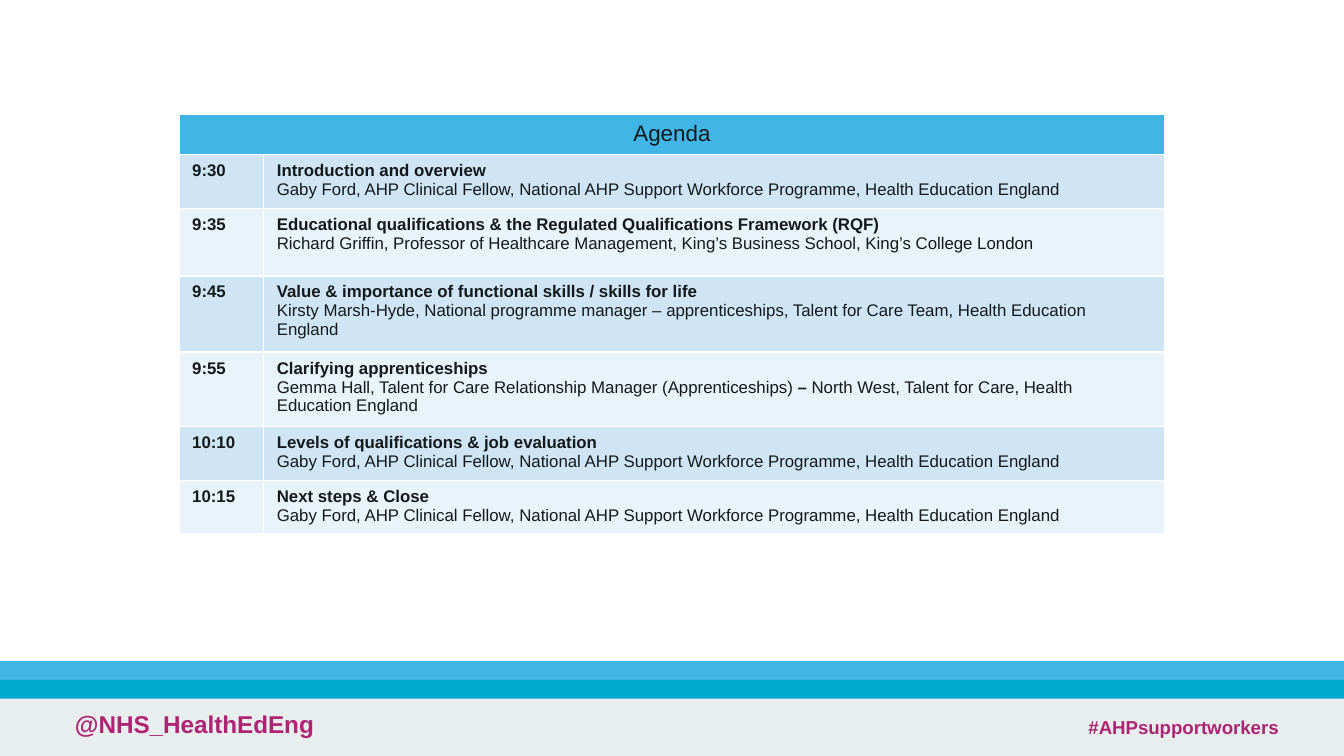
from pptx import Presentation
from pptx.dml.color import RGBColor
from pptx.enum.shapes import MSO_SHAPE
from pptx.enum.text import PP_ALIGN
from pptx.util import Inches, Pt

THEME = dict(
    font="Arial", ink="141A1B", pink="AE2473",
    sky="41B6E6", aqua="00A9CE", grey="E8EDEE", pale=("CFE5F5", "E9F3FA"),
    head=12, body=9, handle=13, tag=10,
)


def write(frame, *lines, size, color=THEME["ink"], align=PP_ALIGN.LEFT):
    """Fill a text frame; each line is a list of (text, bold) runs."""
    frame.word_wrap = True
    for i, line in enumerate(lines):
        para = frame.paragraphs[0] if i == 0 else frame.add_paragraph()
        para.alignment = align
        for text, bold in line:
            run = para.add_run()
            run.text = text
            run.font.name = THEME["font"]
            run.font.size = Pt(size)
            run.font.bold = bold
            run.font.color.rgb = RGBColor.from_string(color)


def paint(item, color):
    item.fill.solid()
    item.fill.fore_color.rgb = RGBColor.from_string(color)


deck = Presentation()
deck.slide_width = Inches(10)
deck.slide_height = deck.slide_width * 9 // 16
slide = deck.slides.add_slide(deck.slide_layouts[6])
shapes = slide.shapes

# Footer bands
for top, high, color in ((5.2, 0.43, "grey"), (4.92, 0.14, "sky"), (5.06, 0.14, "aqua")):
    band = shapes.add_shape(MSO_SHAPE.RECTANGLE, 0, Inches(top), deck.slide_width, Inches(high))
    band.shadow.inherit = False
    paint(band, THEME[color])
    band.line.fill.background()

# Footer labels
for left, top, wide, high, text, size in (
    (0.46, 5.23, 5.84, 0.4, "@NHS_HealthEdEng", THEME["handle"]),
    (8, 5.28, 1.91, 0.27, "#AHPsupportworkers", THEME["tag"]),
):
    box = shapes.add_textbox(Inches(left), Inches(top), Inches(wide), Inches(high))
    write(box.text_frame, [(text, True)], size=size, color=THEME["pink"])

# Agenda: time, least row height, topic, speaker runs
host = [("Gaby Ford, AHP Clinical Fellow, National AHP Support Workforce Programme, "
         "Health Education England", False)]
agenda = [
    ("9:30", 0.36, "Introduction and overview", host),
    ("9:35", 0.5, "Educational qualifications & the Regulated Qualifications Framework (RQF)",
     [("Richard Griffin, Professor of Healthcare Management, King’s Business School, "
       "King’s College London", False)]),
    ("9:45", 0.57, "Value & importance of functional skills / skills for life",
     [("Kirsty Marsh-Hyde, National programme manager – apprenticeships, "
       "Talent for Care Team, Health Education England", False)]),
    ("9:55", 0.22, "Clarifying apprenticeships",
     [("Gemma Hall, Talent for Care Relationship Manager (Apprenticeships) ", False),
      ("– ", True),
      ("North West, Talent for Care, Health Education England", False)]),
    ("10:10", 0.22, "Levels of qualifications & job evaluation", host),
    ("10:15", 0.22, "Next steps & Close", host),
]
cols = (0.63, 6.71)
rows = [0.25] + [item[1] for item in agenda]
grid = shapes.add_table(
    len(rows), len(cols), Inches(1.33), Inches(0.85), Inches(sum(cols)), Inches(sum(rows))
)
table = grid.table
for col, wide in zip(table.columns, cols):
    col.width = Inches(wide)
for row, high in zip(table.rows, rows):
    row.height = Inches(high)
grid.height = Inches(3.12)

head = table.cell(0, 0)
head.merge(table.cell(0, 1))
paint(head, THEME["sky"])
write(head.text_frame, [("Agenda", False)], size=THEME["head"], align=PP_ALIGN.CENTER)

for i, (time, high, topic, people) in enumerate(agenda):
    left, right = table.cell(i + 1, 0), table.cell(i + 1, 1)
    write(left.text_frame, [(time, True)], size=THEME["body"])
    write(right.text_frame, [(topic, True)], people, size=THEME["body"])
    for cell in (left, right):
        cell.margin_right = Inches(0.11)
        paint(cell, THEME["pale"][i % 2])

deck.save("out.pptx")
